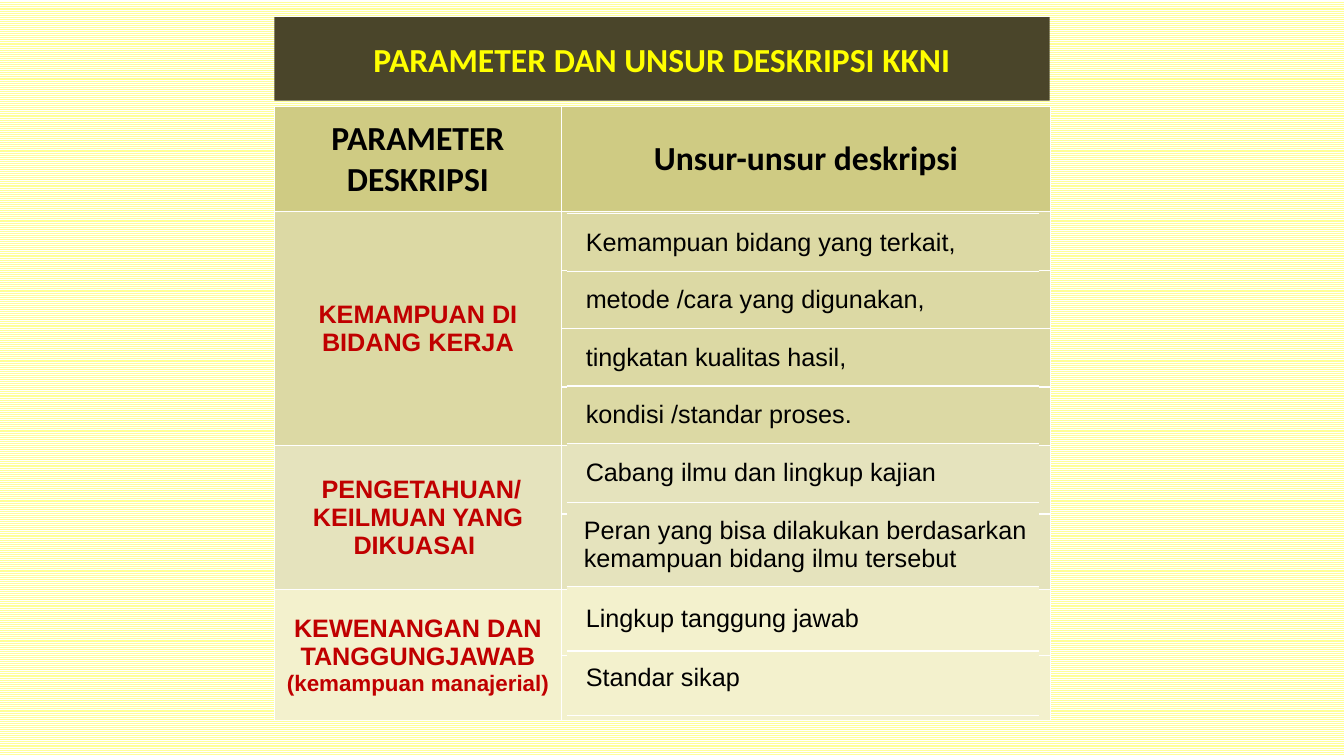
import lxml.etree
import pptx
import pptx.dml.color
import pptx.enum.dml
import pptx.enum.shapes
import pptx.enum.text
import pptx.oxml.ns
import pptx.util

COLOURS = {
    "stripe": "FFFF99",
    "white": "FFFFFF",
    "banner": "4A452A",
    "banner_text": "FFFF00",
    "header": "CFCB83",
    "work": "DCD9A4",
    "knowledge": "E5E3BD",
    "authority": "F3F1CD",
    "parameter": "C00000",
    "text": "000000",
}
HEADERS = ["PARAMETER DESKRIPSI", "Unsur-unsur deskripsi"]
PARAMETERS = [
    ("work", [("KEMAMPUAN DI BIDANG KERJA", 18)], [58, 58, 58, 58]),
    ("knowledge", [(" PENGETAHUAN/ KEILMUAN YANG DIKUASAI ", 18)], [68, 75]),
    ("authority", [("KEWENANGAN DAN TANGGUNGJAWAB", 18),
                   ("(kemampuan manajerial)", 16)], [65, 65]),
]
ELEMENTS = [
    ("work", "Kemampuan bidang yang terkait,", 57, 19, None),
    ("work", "metode /cara yang digunakan,", 57, 19, None),
    ("work", "tingkatan kualitas hasil,", 57, 19, None),
    ("work", "kondisi /standar proses.", 57, 19, None),
    ("knowledge", "Cabang ilmu dan lingkup kajian", 59, 19, None),
    ("knowledge", "Peran yang bisa dilakukan berdasarkan kemampuan bidang ilmu tersebut",
     83, 17, None),
    ("authority", "Lingkup tanggung jawab", 64, 19, None),
    ("authority", "Standar sikap", 64, 19, 12),
]


def px(length):
    """Turn px at 100 to the inch into EMU."""
    return pptx.util.Emu(length * 9144)


def colour(name):
    """Return the named colour as an RGB value."""
    return pptx.dml.color.RGBColor.from_string(COLOURS[name])


def write(para, text, size=18, font="Arial", ink="text", bold=False, align="LEFT", leading=None):
    """Write one formatted span into a paragraph."""
    para.alignment = getattr(pptx.enum.text.PP_ALIGN, align)
    if leading:
        para.line_spacing = pptx.util.Pt(leading)
    span = para.add_run()
    span.text = text
    span.font.size = pptx.util.Pt(size)
    span.font.name = font
    span.font.bold = bold
    span.font.color.rgb = colour(ink)


class SlideBuilder:
    """Hold the page and draw its kinds of element."""

    def __init__(self, page):
        """Keep the page to draw on."""
        self.page = page

    def background(self):
        """Fill the page with horizontal stripes."""
        fill = self.page.background.fill
        fill.patterned()
        fill.pattern = pptx.enum.dml.MSO_PATTERN.LIGHT_HORIZONTAL
        fill.fore_color.rgb = colour("stripe")
        fill.back_color.rgb = colour("white")

    def banner(self, text, left, top, width, height):
        """Add the title bar."""
        box = self.page.shapes.add_shape(pptx.enum.shapes.MSO_SHAPE.RECTANGLE,
                                         px(left), px(top), px(width), px(height))
        box.shadow.inherit = False
        box.fill.solid()
        box.fill.fore_color.rgb = colour("banner")
        box.line.fill.background()
        box.text_frame.word_wrap = True
        box.text_frame.vertical_anchor = pptx.enum.text.MSO_ANCHOR.MIDDLE
        write(box.text_frame.paragraphs[0], text, size=24, font="Calibri",
              ink="banner_text", bold=True, align="CENTER")

    def table(self, left, top, columns, rows):
        """Add an unbanded table with the given column widths and row heights."""
        frame = self.page.shapes.add_table(len(rows), len(columns), px(left), px(top),
                                           px(sum(columns)), px(sum(rows)))
        table = frame.table
        table.first_row = table.horz_banding = False
        for column, width in zip(table.columns, columns):
            column.width = px(width)
        for row, height in zip(table.rows, rows):
            row.height = px(height)
        return table

    def cell(self, cell, fill, sides="LRTB", indent=7):
        """Fill a cell and rule the named sides in white."""
        cell.fill.solid()
        cell.fill.fore_color.rgb = colour(fill)
        cell.vertical_anchor = pptx.enum.text.MSO_ANCHOR.MIDDLE
        cell.margin_left, cell.margin_right = px(indent), px(7)
        cell.margin_top = cell.margin_bottom = 0
        qn = pptx.oxml.ns.qn
        properties = cell._tc.get_or_add_tcPr()
        for index, side in enumerate("LRTB"):
            line = lxml.etree.Element(qn("a:ln" + side), w="12700")
            if side in sides:
                solid = lxml.etree.SubElement(line, qn("a:solidFill"))
                lxml.etree.SubElement(solid, qn("a:srgbClr"), val=COLOURS["white"])
            else:
                lxml.etree.SubElement(line, qn("a:noFill"))
            properties.insert(index, line)

    def parameters(self):
        """Add the parameter table with its merged headings."""
        heights = [height for _, _, band in PARAMETERS for height in band]
        table = self.table(272, 106, [285, 485], [104] + heights)
        for column, text in enumerate(HEADERS):
            cell = table.cell(0, column)
            self.cell(cell, "header")
            write(cell.text_frame.paragraphs[0], text, size=24, font="Calibri",
                  bold=True, align="CENTER")
        first = 1
        for fill, lines, band in PARAMETERS:
            last = first + len(band) - 1
            for row in range(first, last + 1):
                for column in range(2):
                    self.cell(table.cell(row, column), fill)
            heading = table.cell(first, 0)
            heading.merge(table.cell(last, 0))
            frame = heading.text_frame
            for index, (text, size) in enumerate(lines):
                para = frame.add_paragraph() if index else frame.paragraphs[0]
                write(para, text, size=size, ink="parameter", bold=True, align="CENTER")
            first = last + 1

    def elements(self):
        """Add the table of description elements."""
        table = self.table(562, 212, [469], [element[2] for element in ELEMENTS])
        for row, (fill, text, _, indent, leading) in enumerate(ELEMENTS):
            cell = table.cell(row, 0)
            self.cell(cell, fill, sides="TB", indent=indent)
            write(cell.text_frame.paragraphs[0], text, leading=leading)


def main():
    """Build and save the deck."""
    deck = pptx.Presentation()
    deck.slide_width, deck.slide_height = px(1333), px(750)
    builder = SlideBuilder(deck.slides.add_slide(deck.slide_layouts[6]))
    builder.background()
    builder.banner("PARAMETER DAN UNSUR DESKRIPSI KKNI", 272, 17, 769, 83)
    builder.parameters()
    builder.elements()
    deck.save("out.pptx")


if __name__ == "__main__":
    main()
